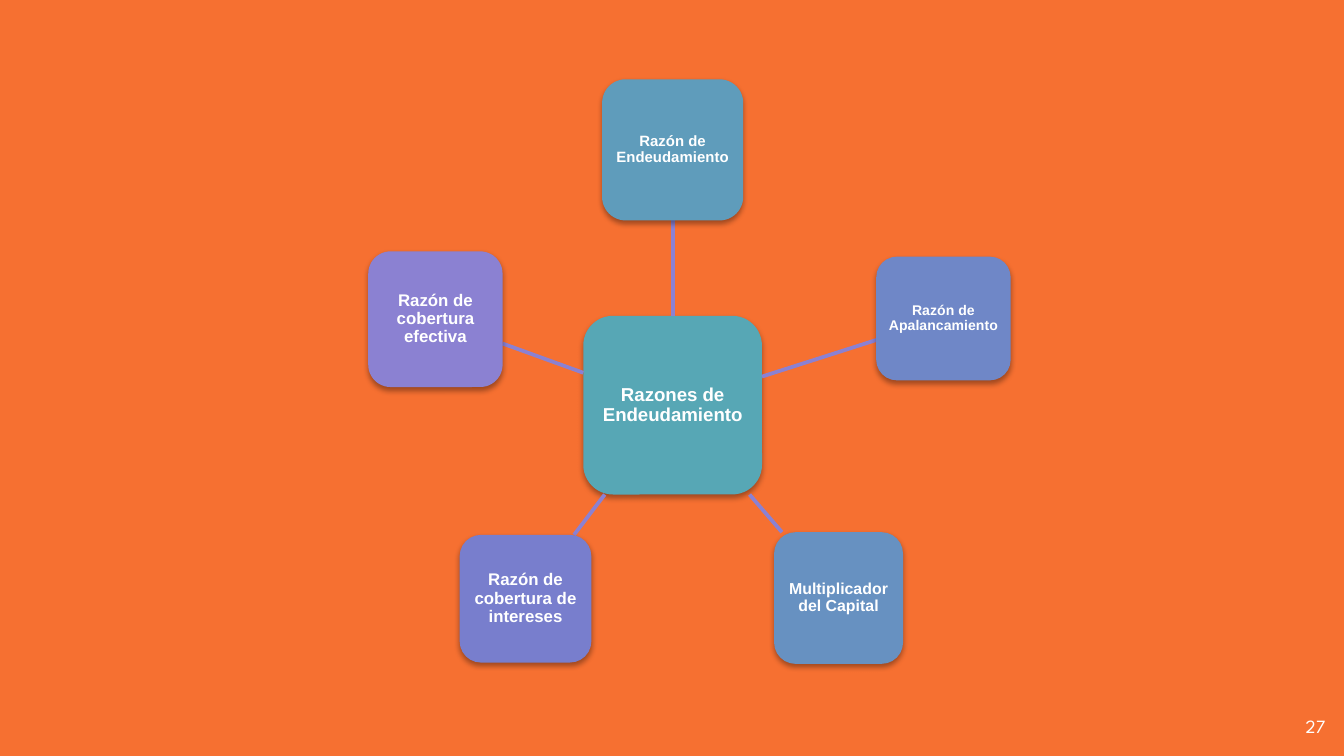
from lxml.etree import SubElement
from pptx import Presentation
from pptx.dml.color import RGBColor
from pptx.enum.shapes import MSO_CONNECTOR as CONN, MSO_SHAPE as SHAPE
from pptx.enum.text import MSO_ANCHOR as ANCHOR, PP_ALIGN as ALIGN
from pptx.oxml.ns import qn
from pptx.util import Inches, Pt

DIAGRAM = (2.74, 0.59, 4.78, 4.35)
# Boxes are relative to the diagram: left, top, width, height
HUB = ("Razones de Endeudamiento", (1.6, 1.76, 1.33, 1.33), "57A7B5", 10)
RATIOS = [
    ("Razón de Endeudamiento", (1.74, 0, 1.05, 1.05), "5F9CBB", 8),
    ("Multiplicador del Capital", (3.02, 3.37, 0.96, 0.98), "6791C1", 8.5),
    ("Razón de Apalancamiento", (3.78, 1.32, 1, 0.92), "6F87C7", 7.5),
    ("Razón de cobertura de intereses", (0.68, 3.39, 0.98, 0.95), "787ECD", 9),
    ("Razón de cobertura efectiva", (0, 1.28, 1, 1.01), "8B81D2", 9),
]


def rgb(value):
    return RGBColor.from_string(value)


def add_shadow(sp):
    """Give the shape a soft black shadow just below it."""
    sp.shadow.inherit = False
    effects = sp._element.spPr.find(qn("a:effectLst"))
    shadow = SubElement(effects, qn("a:outerShdw"), blurRad=str(Pt(3.1)),
                        dist=str(Pt(1.8)), dir="5400000", rotWithShape="0")
    color = SubElement(shadow, qn("a:srgbClr"), val="000000")
    SubElement(color, qn("a:alpha"), val="35000")


def set_text(tf, text, font, size, align, inset, bold=False):
    tf.word_wrap = True
    tf.vertical_anchor = ANCHOR.MIDDLE
    tf.margin_left = tf.margin_right = Inches(inset)
    tf.margin_top = tf.margin_bottom = Inches(inset)
    tf.text = text
    p = tf.paragraphs[0]
    p.alignment = align
    f = p.runs[0].font
    f.name, f.size, f.bold = font, Pt(size), bold
    f.color.rgb = rgb("FFFFFF")
    return p


def add_node(s, text, box, fill, size):
    sp = s.shapes.add_shape(SHAPE.ROUNDED_RECTANGLE, *map(Inches, box))
    sp.fill.solid()
    sp.fill.fore_color.rgb = rgb(fill)
    sp.line.fill.background()
    add_shadow(sp)
    p = set_text(sp.text_frame, text, "Arial", size, ALIGN.CENTER, 0.02, True)
    p.line_spacing = 0.9
    return sp


def center(box):
    x, y, w, h = box
    return x + w / 2, y + h / 2


def edge_point(box, target):
    """Where the line from the middle of the box to target leaves the box."""
    x, y = center(box)
    dx, dy = target[0] - x, target[1] - y
    t = 1 / max(abs(dx) / (box[2] / 2), abs(dy) / (box[3] / 2))
    return x + dx * t, y + dy * t


def add_spoke(s, hub_box, node_box):
    start = edge_point(hub_box, center(node_box))
    end = edge_point(node_box, center(hub_box))
    line = s.shapes.add_connector(CONN.STRAIGHT, *map(Inches, start + end))
    line.line.color.rgb = rgb("8B81D2")
    line.line.width = Pt(2)
    SubElement(line._element.spPr, qn("a:effectLst"))
    return line


def add_radial_diagram(s, box):
    def place(rel):
        return box[0] + rel[0], box[1] + rel[1], rel[2], rel[3]

    text, rel, fill, size = HUB
    hub_box = place(rel)
    hub = add_node(s, text, hub_box, fill, size)
    for i, (text, rel, fill, size) in enumerate(RATIOS):
        node_box = place(rel)
        spoke = add_spoke(s, hub_box, node_box)
        node = add_node(s, text, node_box, fill, size)
        if i == 0:  # straight above the hub
            spoke.begin_connect(hub, 0)
            spoke.end_connect(node, 2)


def add_page_number(s, box, number):
    sp = s.shapes.add_textbox(*map(Inches, box))
    set_text(sp.text_frame, number, "League Spartan", 10, ALIGN.RIGHT, 0.1)


def main():
    prs = Presentation()
    prs.slide_width = Inches(10)
    prs.slide_height = prs.slide_width * 9 // 16
    s = prs.slides.add_slide(prs.slide_layouts[6])
    s.background.fill.solid()
    s.background.fill.fore_color.rgb = rgb("F67031")
    add_page_number(s, (9.36, 5.19, 0.6, 0.43), "27")
    add_radial_diagram(s, DIAGRAM)
    prs.save("out.pptx")


if __name__ == "__main__":
    main()
